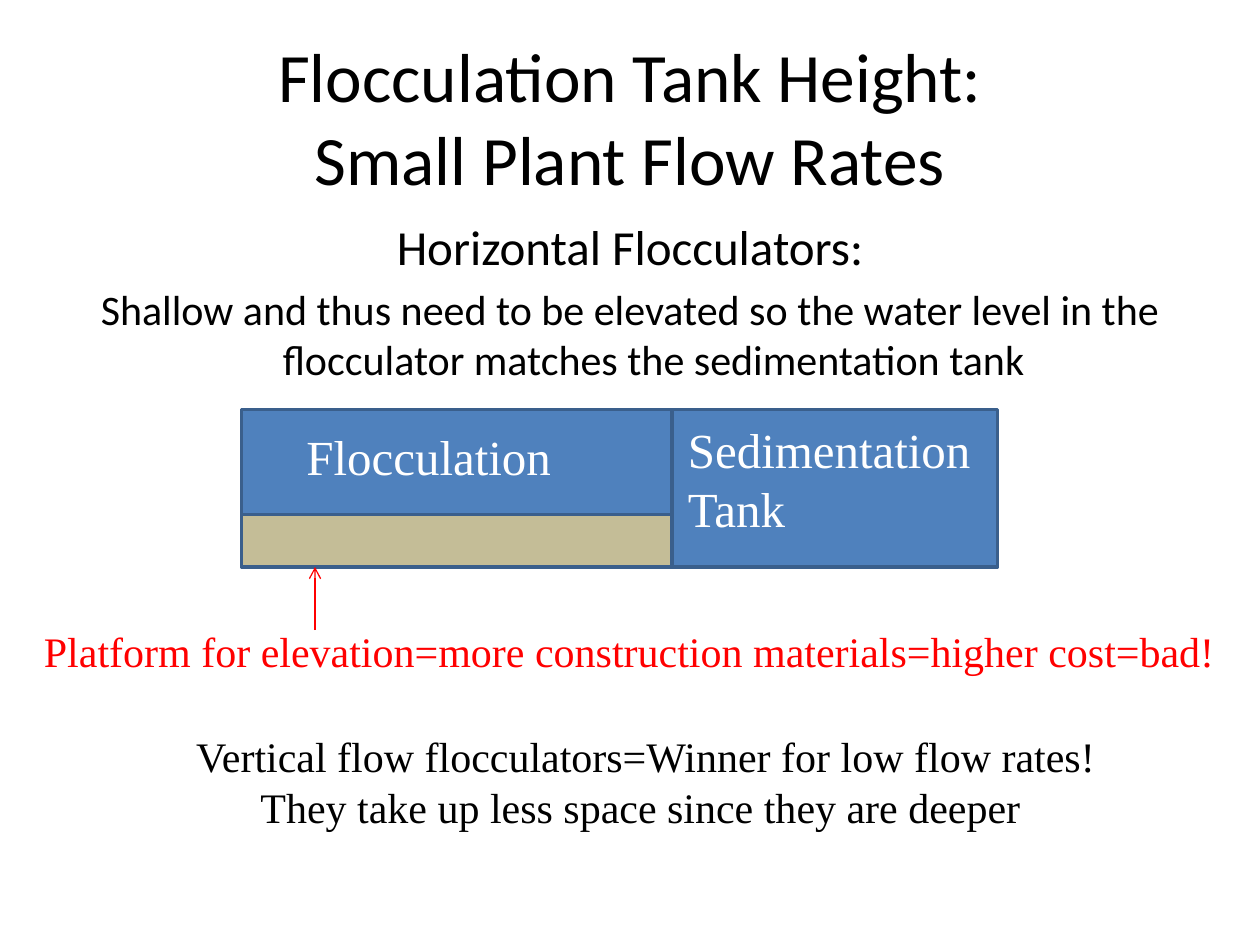
from lxml import etree
from pptx import Presentation
from pptx import util as u
from pptx.dml.color import RGBColor
from pptx.enum import shapes, text
from pptx.oxml.ns import qn

THEME = {
    "heading_font": "Calibri", "label_font": "Times New Roman",
    "title": 39.6, "large": 28, "normal": 24,
    "black": "000000", "white": "FFFFFF", "red": "FF0000",
    "water": "4F81BD", "platform": "C4BD97", "outline": "3A5F8C",
}
LEFT, CENTER = text.PP_ALIGN.LEFT, text.PP_ALIGN.CENTER

TITLE = ["Flocculation Tank Height:", "Small Plant Flow Rates"]
TITLE_BOX = (36, 21.6, 648, 90)
BODY = [
    ("Horizontal Flocculators:", "large"),
    ("Shallow and thus need to be elevated so the water level in the "
     "flocculator matches the sedimentation tank", "normal"),
]
BODY_BOX = (0, 120, 720, 102)
HANGING = 27

TANK_LEFT, TANK_TOP = 138, 234
FLOCCULATOR_WIDTH, SEDIMENTATION_WIDTH = 246, 186
WATER_DEPTH, PLATFORM_DEPTH = 60, 30
TANK_DEPTH = WATER_DEPTH + PLATFORM_DEPTH
TANKS = [
    (TANK_LEFT + FLOCCULATOR_WIDTH, TANK_TOP, SEDIMENTATION_WIDTH, TANK_DEPTH, "water"),
    (TANK_LEFT, TANK_TOP, FLOCCULATOR_WIDTH, WATER_DEPTH, "water"),
    (TANK_LEFT, TANK_TOP + WATER_DEPTH, FLOCCULATOR_WIDTH, PLATFORM_DEPTH, "platform"),
]
ARROW_X, ARROW_START = 180, 360

LABELS = [
    ((168, 240, 162, 44), ["Flocculation"], "large", "white", LEFT),
    ((386, 236, 195, 75), ["Sedimentation Tank"], "large", "white", LEFT),
    ((72, 414, 594, 65.5),
     ["Vertical flow flocculators=Winner for low flow rates!",
      "They take up less space since they are deeper "], "normal", "black", CENTER),
    ((18, 354, 702, 36),
     ["Platform for elevation=more construction materials=higher cost=bad!"],
     "normal", "red", LEFT),
]


def points(values):
    return [u.Pt(value) for value in values]


def color(name):
    return RGBColor.from_string(THEME[name])


def add_run(paragraph, words, font, size, ink):
    run = paragraph.add_run()
    run.text = words
    run.font.name = THEME[font]
    run.font.size = u.Pt(THEME[size])
    run.font.color.rgb = color(ink)


def add_paragraph(frame, index, alignment):
    paragraph = frame.add_paragraph() if index else frame.paragraphs[0]
    paragraph.alignment = alignment
    return paragraph


def add_text_frame(slide, box):
    frame = slide.shapes.add_textbox(*points(box)).text_frame
    frame.word_wrap = True
    return frame


def add_title(slide):
    title = slide.shapes.title
    title.left, title.top, title.width, title.height = points(TITLE_BOX)
    frame = title.text_frame
    frame.word_wrap = True
    frame.auto_size = text.MSO_AUTO_SIZE.NONE
    frame.vertical_anchor = text.MSO_ANCHOR.MIDDLE
    paragraph = add_paragraph(frame, 0, CENTER)
    for index, line in enumerate(TITLE):
        if index:
            paragraph.add_line_break()
        add_run(paragraph, line, "heading_font", "title", "black")


def add_body(slide):
    frame = add_text_frame(slide, BODY_BOX)
    for index, (words, size) in enumerate(BODY):
        paragraph = add_paragraph(frame, index, CENTER)
        properties = paragraph._p.get_or_add_pPr()
        properties.set("marL", str(u.Pt(HANGING)))
        properties.set("indent", str(-u.Pt(HANGING)))
        if index:
            paragraph.space_before = u.Pt(THEME[size] * 0.2)
        add_run(paragraph, words, "heading_font", size, "black")


def add_tank(slide, *box, fill):
    tank = slide.shapes.add_shape(shapes.MSO_SHAPE.RECTANGLE, *points(box))
    tank.shadow.inherit = False
    tank.fill.solid()
    tank.fill.fore_color.rgb = color(fill)
    tank.line.color.rgb = color("outline")
    tank.line.width = u.Pt(2)


def add_label(slide, box, lines, size, ink, alignment):
    frame = add_text_frame(slide, box)
    frame.auto_size = text.MSO_AUTO_SIZE.SHAPE_TO_FIT_TEXT
    for index, line in enumerate(lines):
        add_run(add_paragraph(frame, index, alignment), line, "label_font", size, ink)


def add_arrow(slide):
    ends = points((ARROW_X, ARROW_START, ARROW_X, TANK_TOP + TANK_DEPTH))
    arrow = slide.shapes.add_connector(shapes.MSO_CONNECTOR.STRAIGHT, *ends)
    arrow.line.color.rgb = color("red")
    arrow.line.width = u.Pt(0.75)
    etree.SubElement(arrow.line._get_or_add_ln(), qn("a:tailEnd"), type="arrow")
    etree.SubElement(arrow._element.spPr, qn("a:effectLst"))


def main():
    presentation = Presentation()
    presentation.slide_width, presentation.slide_height = points((720, 540))
    slide = presentation.slides.add_slide(presentation.slide_layouts[5])
    add_title(slide)
    add_body(slide)
    for *box, fill in TANKS:
        add_tank(slide, *box, fill=fill)
    for label in LABELS:
        add_label(slide, *label)
    add_arrow(slide)
    presentation.save("out.pptx")


if __name__ == "__main__":
    main()
